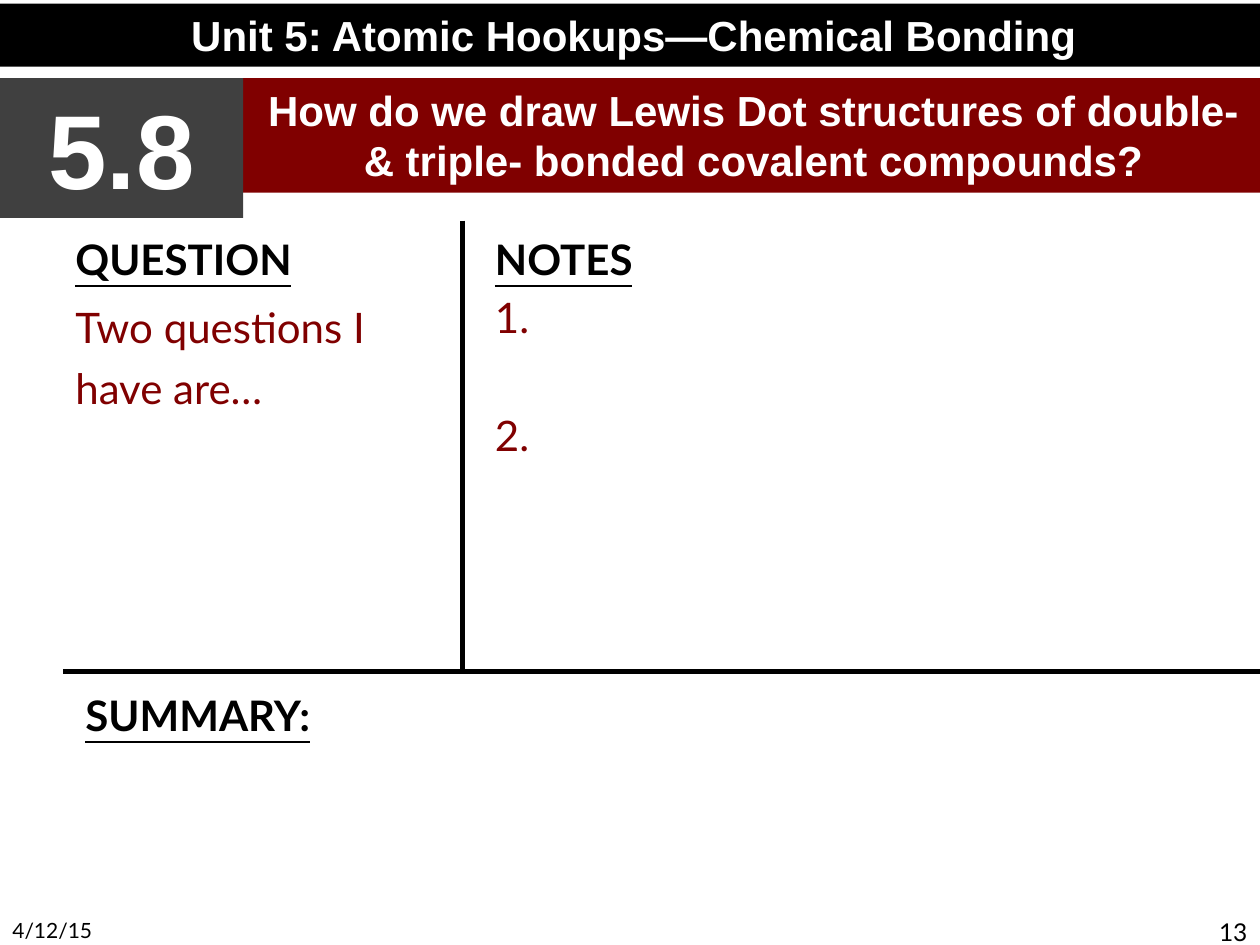
from pptx import Presentation
from pptx.dml.color import RGBColor
from pptx.enum.shapes import MSO_CONNECTOR as Connector, MSO_SHAPE as Shape
from pptx.enum.text import MSO_ANCHOR as Anchor, MSO_AUTO_SIZE as AutoSize, PP_ALIGN as Align
from pptx.oxml.ns import qn
from pptx.util import Inches, Pt
from lxml import etree

COLORS = {"black": "000000", "white": "FFFFFF", "gray": "404040", "maroon": "800000"}
HEADING = dict(size=24, font="Lato", color="black", bold=True, underline=True)
BODY = dict(size=24, font="Lato", color="maroon")


def rgb(name):
    return RGBColor.from_string(COLORS[name])


def place(shape, box):
    shape.left, shape.top, shape.width, shape.height = (Inches(v) for v in box)


def write(para, text, size, font, color, bold=False, underline=False):
    span = para.add_run()
    span.text = text
    span.font.size = Pt(size)
    span.font.name = font
    span.font.color.rgb = rgb(color)
    span.font.bold = bold
    span.font.underline = underline


def prepare(frame):
    frame.word_wrap = True
    frame.auto_size = AutoSize.NONE
    frame.vertical_anchor = Anchor.TOP
    frame.margin_left = frame.margin_right = Inches(0.1)
    frame.margin_top = frame.margin_bottom = Inches(0.05)


def add_banner(page, box, text, size, fill, shape=None):
    """Filled bar with centred bold white text."""
    if shape is None:
        shape = page.shapes.add_shape(Shape.RECTANGLE, 0, 0, 0, 0)
        shape.shadow.inherit = False
    place(shape, box)
    shape.fill.solid()
    shape.fill.fore_color.rgb = rgb(fill)
    shape.line.fill.background()
    prepare(shape.text_frame)
    para = shape.text_frame.paragraphs[0]
    para.alignment = Align.CENTER
    write(para, text, size, "Arial", "white", bold=True)


def add_text(page, box, text, style, align=Align.LEFT):
    shape = page.shapes.add_textbox(*(Inches(v) for v in box))
    prepare(shape.text_frame)
    para = shape.text_frame.paragraphs[0]
    para.alignment = align
    write(para, text, **style)
    return shape.text_frame


def add_section(page, box, heading, lines=(), spacing=1.0):
    """Underlined heading, then (text, space before in points) lines."""
    frame = add_text(page, box, heading, HEADING)
    for text, gap in lines:
        para = frame.add_paragraph()
        para.space_before = Pt(gap)
        para.line_spacing = spacing
        write(para, text, **BODY)


def add_rule(page, start, end):
    line = page.shapes.add_connector(Connector.STRAIGHT, *(Inches(v) for v in start + end))
    line.line.color.rgb = rgb("black")
    line.line.width = Pt(3)
    etree.SubElement(line._element.spPr, qn("a:effectLst"))


def add_header(page, left, top):
    add_banner(page, (left, top, 10.06, 0.5), "Unit 5: Atomic Hookups—Chemical Bonding", 24, "black")
    add_banner(page, (left, top + 0.59, 1.93, 1.11), "5.8", 60, "gray")
    add_banner(page, (left + 1.93, top + 0.59, 8.1, 0.91),
               "How do we draw Lewis Dot structures of double- & triple- bonded covalent compounds?",
               24, "maroon", page.shapes.title)


def add_note_grid(page, left, top, right, bottom):
    split, floor = left + 3.17, top + 3.53
    add_section(page, (left, top, split - left, 3.45), "QUESTION",
                [("Two questions I have are…", 4.8)], spacing=1.2)
    add_section(page, (split + 0.16, top, right - split - 0.16, 3.45), "NOTES",
                [("1.", 4.8), ("2.", 38.4)])
    add_section(page, (left + 0.08, floor + 0.09, right - left - 0.08, bottom - floor - 0.09),
                "SUMMARY:")
    add_rule(page, (split, top - 0.05), (split, floor))
    add_rule(page, (right, floor), (left, floor))


def add_footer(page, top, width):
    part = 2.33
    style = dict(font="Lato", color="black")
    add_text(page, (0, top, part, 0.27), "4/12/15", dict(style, size=12))
    add_text(page, (width - part, top, part, 0.27), "13", dict(style, size=14), Align.RIGHT)


def main():
    deck = Presentation()
    deck.slide_width, deck.slide_height = Inches(10), Inches(7.5)
    page = deck.slides.add_slide(deck.slide_layouts[5])
    add_header(page, 0, 0.03)
    add_note_grid(page, 0.5, 1.8, 10, 7.5)
    add_footer(page, 7.23, 10)
    deck.save("out.pptx")


if __name__ == "__main__":
    main()
